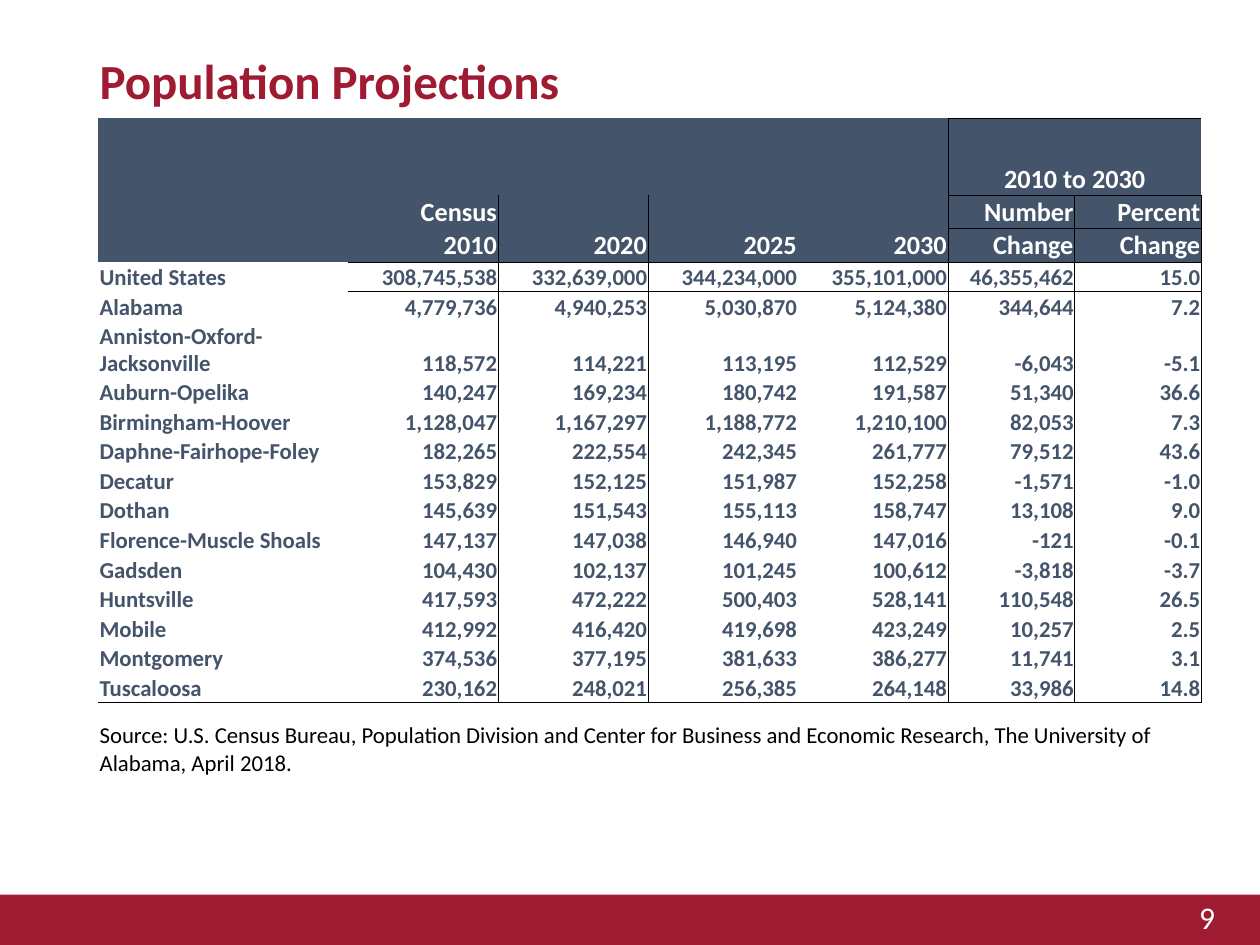
import pptx
import pptx.util
import pptx.dml.color
import pptx.enum.shapes
import pptx.enum.text
import pptx.oxml
import pptx.oxml.ns

Pt = pptx.util.Pt
Align = pptx.enum.text.PP_ALIGN
Anchor = pptx.enum.text.MSO_ANCHOR

COLORS = {"red": "9E1B32", "slate": "44546A", "white": "FFFFFF", "black": "000000"}
FONT = "Calibri"
TITLE = "Population Projections"
PAGE = "9"
HEAD = [
    ["", "", "", "", "", "2010 to 2030", ""],
    ["", "Census", "", "", "", "Number", "Percent"],
    ["", "2010", "2020", "2025", "2030", "Change", "Change"],
]
BODY = [
    ["United States", "308,745,538", "332,639,000", "344,234,000", "355,101,000", "46,355,462", "15.0"],
    ["Alabama", "4,779,736", "4,940,253", "5,030,870", "5,124,380", "344,644", "7.2"],
    ["Anniston-Oxford-Jacksonville", "118,572", "114,221", "113,195", "112,529", "-6,043", "-5.1"],
    ["Auburn-Opelika", "140,247", "169,234", "180,742", "191,587", "51,340", "36.6"],
    ["Birmingham-Hoover", "1,128,047", "1,167,297", "1,188,772", "1,210,100", "82,053", "7.3"],
    ["Daphne-Fairhope-Foley", "182,265", "222,554", "242,345", "261,777", "79,512", "43.6"],
    ["Decatur", "153,829", "152,125", "151,987", "152,258", "-1,571", "-1.0"],
    ["Dothan", "145,639", "151,543", "155,113", "158,747", "13,108", "9.0"],
    ["Florence-Muscle Shoals", "147,137", "147,038", "146,940", "147,016", "-121", "-0.1"],
    ["Gadsden", "104,430", "102,137", "101,245", "100,612", "-3,818", "-3.7"],
    ["Huntsville", "417,593", "472,222", "500,403", "528,141", "110,548", "26.5"],
    ["Mobile", "412,992", "416,420", "419,698", "423,249", "10,257", "2.5"],
    ["Montgomery", "374,536", "377,195", "381,633", "386,277", "11,741", "3.1"],
    ["Tuscaloosa", "230,162", "248,021", "256,385", "264,148", "33,986", "14.8"],
]
SOURCE = ("Source: U.S. Census Bureau, Population Division and Center for Business "
          "and Economic Research, The University of Alabama, April 2018.")
ROWS = HEAD + BODY + [[SOURCE] + [""] * 6]
NOTE = len(ROWS) - 1
WIDTHS = [142.8] + [85.7] * 4 + [72.4] * 2
HEIGHTS = [43.9, 19.1, 19.1] + [16.9] * len(BODY) + [53.3]
HEIGHTS[5] = 31.3
NO_STYLE = "{2D5ABB26-0587-4C30-8999-92F81FD0307C}"


def color(name):
    return pptx.dml.color.RGBColor.from_string(COLORS[name])


def style(para, size, hue, bold=False):
    for run in para.runs:
        run.font.name, run.font.size, run.font.bold = FONT, Pt(size), bold
        run.font.color.rgb = color(hue)


def edges(row, col):
    """Return the sides of a cell that carry a rule, in schema order."""
    data, last = row < NOTE, col >= 5
    rules = {
        "L": data and (col == 5 or col == 2 and row > 0),
        "R": data and (col in (4, 6) or col == 1 and row > 0),
        "T": row == NOTE or row in (0, 1) and last or row == 3 and col > 0,
        "B": row == NOTE - 1 or row == 0 and last or row == 2 and col > 0,
    }
    return [side for side, drawn in rules.items() if drawn]


def rule(cell, side):
    cell._tc.get_or_add_tcPr().append(pptx.oxml.parse_xml(
        f'<a:ln{side} {pptx.oxml.ns.nsdecls("a")} w="6350"><a:solidFill>'
        f'<a:srgbClr val="{COLORS["black"]}"/></a:solidFill></a:ln{side}>'))


def fill_cell(cell, row, col):
    head, note = row < len(HEAD), row == NOTE
    for side in edges(row, col):
        rule(cell, side)
    if head:
        cell.fill.solid()
        cell.fill.fore_color.rgb = color("slate")
    else:
        cell.fill.background()
    cell.margin_left = cell.margin_right = cell.margin_top = Pt(0.75)
    cell.margin_bottom = 0
    cell.vertical_anchor = Anchor.MIDDLE if note else Anchor.BOTTOM
    para = cell.text_frame.paragraphs[0]
    para.text = ROWS[row][col]
    if head and row == 0:
        para.alignment = Align.CENTER
    else:
        para.alignment = Align.RIGHT if col else Align.LEFT
    size = 15 if head else 13
    style(para, size, "white" if head else "black" if note else "slate", not note)
    if not para.text:  # keeps an empty cell from stretching its row
        para._p.append(pptx.oxml.parse_xml(
            f'<a:endParaRPr {pptx.oxml.ns.nsdecls("a")} sz="{size * 100}"/>'))


def add_grid(slide):
    table = slide.shapes.add_table(
        len(ROWS), len(WIDTHS), Pt(56.2), Pt(67.7),
        Pt(sum(WIDTHS)), Pt(sum(HEIGHTS))).table
    table.first_row = table.horz_banding = False
    table._tbl.tblPr.find(pptx.oxml.ns.qn("a:tableStyleId")).text = NO_STYLE
    for column, width in zip(table.columns, WIDTHS):
        column.width = Pt(width)
    for row, height in enumerate(HEIGHTS):
        table.rows[row].height = Pt(height)
        for col in range(len(WIDTHS)):
            fill_cell(table.cell(row, col), row, col)
    table.cell(0, 5).merge(table.cell(0, 6))
    table.cell(NOTE, 0).merge(table.cell(NOTE, 6))


def add_foot(slide):
    band = slide.shapes.add_shape(
        pptx.enum.shapes.MSO_SHAPE.RECTANGLE, 0, Pt(511.2), Pt(720), Pt(28.8))
    band.shadow.inherit = False
    band.fill.solid()
    band.fill.fore_color.rgb = color("red")
    band.line.fill.background()
    frame = slide.shapes.add_textbox(Pt(678.2), Pt(509.8), Pt(41.8), Pt(29)).text_frame
    frame.word_wrap = True
    frame.text = PAGE
    style(frame.paragraphs[0], 18, "white")


def set_title(slide):
    title = slide.shapes.title
    title.left, title.top, title.width, title.height = Pt(49.7), Pt(28.8), Pt(620.6), Pt(104.4)
    frame = title.text_frame
    frame.text = TITLE
    frame.auto_size = pptx.enum.text.MSO_AUTO_SIZE.NONE
    frame.vertical_anchor = Anchor.TOP
    para = frame.paragraphs[0]
    para.alignment, para.line_spacing = Align.LEFT, 0.9
    style(para, 28, "red", True)


def main():
    deck = pptx.Presentation()
    deck.slide_width, deck.slide_height = Pt(720), Pt(540)
    slide = deck.slides.add_slide(deck.slide_layouts[5])
    add_foot(slide)
    set_title(slide)
    add_grid(slide)
    deck.save("out.pptx")


if __name__ == "__main__":
    main()
